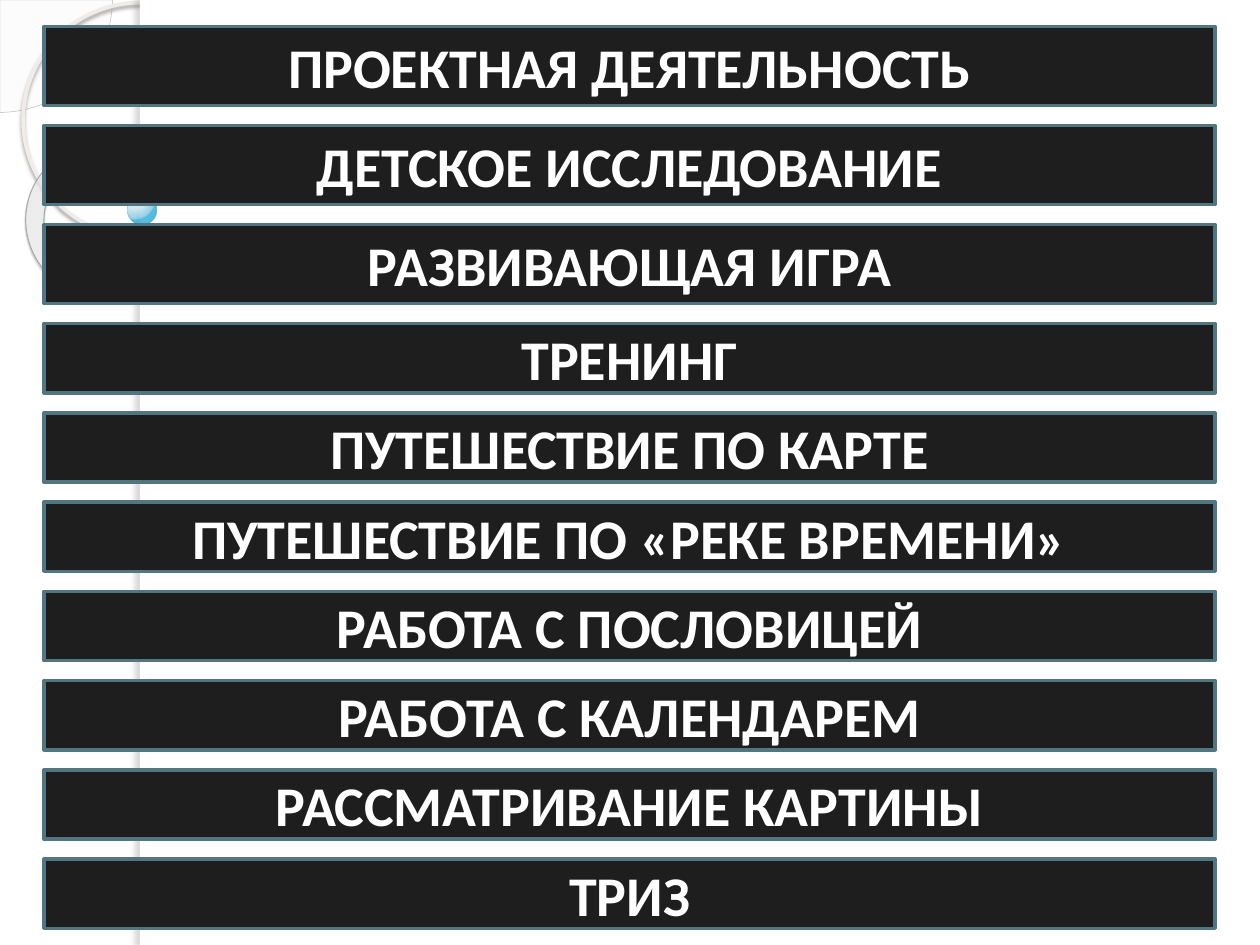
from lxml import etree
from pptx import Presentation
from pptx.dml.color import RGBColor
from pptx.enum import shapes, text
from pptx.oxml import ns
from pptx.util import Pt

WHITE = RGBColor(0xFF, 0xFF, 0xFF)
BAR_FILL = RGBColor(0x1E, 0x1E, 0x1E)
BAR_LINE = RGBColor(0x51, 0x76, 0x82)
PIE_FILL = RGBColor(0xF8, 0xF8, 0xF7)
PIE_LINE = RGBColor(0xB7, 0xB4, 0xB0)
RING_LINE = RGBColor(0xEF, 0xEC, 0xEA)
RING_SHADOW = RGBColor(0x9E, 0x9B, 0x99)
DONUT_STOPS = [(0, RGBColor(0xFA, 0xFA, 0xF9), 70),
               (70, RGBColor(0xFD, 0xFD, 0xFC), 55),
               (100, RGBColor(0xC0, 0xB9, 0xB3), 60)]
DONUT_LINE = RGBColor(0xAC, 0xA8, 0xA5)
DONUT_SHADOW = RGBColor(0x4F, 0x4D, 0x4C)
EDGE_SHADOW = RGBColor(0x69, 0x68, 0x67)
BEAD_STOPS = [(0, RGBColor(0xDF, 0xF5, 0xFE), 95),
              (50, RGBColor(0xCC, 0xE6, 0xF0), 90),
              (95, RGBColor(0x87, 0xCB, 0xE4), 88),
              (100, RGBColor(0x38, 0xB2, 0xD9), 85)]
BEAD_LINE = RGBColor(0x66, 0x9A, 0xAB)
KIND = shapes.MSO_SHAPE


def add_part(parent, tag, **attributes):
    part = etree.SubElement(parent, ns.qn(tag))
    for name, value in attributes.items():
        part.set(name, str(value))
    return part


def draw(kind, box, fill=None, line=None, width=0, alpha=None, stops=None,
         focus=None, shadow=None):
    """Add a preset shape; alpha is a fill opacity, shadow is
    (colour, opacity, blur, distance, angle)."""
    shape = page.shapes.add_shape(kind, *[Pt(length) for length in box])
    shape.shadow.inherit = False
    properties = shape._element.spPr
    if line is None:
        shape.line.fill.background()
    else:
        shape.line.color.rgb = line
        shape.line.width = Pt(width)
    if fill is None:
        shape.fill.background()
    else:
        shape.fill.solid()
        shape.fill.fore_color.rgb = fill
    if alpha:
        colour = properties.find(ns.qn("a:solidFill"))[0]
        add_part(colour, "a:alpha", val=alpha * 1000)
    if stops:
        gradient = etree.Element(ns.qn("a:gradFill"), rotWithShape="1")
        stop_list = add_part(gradient, "a:gsLst")
        for position, rgb, opacity in stops:
            stop = add_part(stop_list, "a:gs", pos=position * 1000)
            colour = add_part(stop, "a:srgbClr", val=rgb)
            add_part(colour, "a:alpha", val=opacity * 1000)
        radial = add_part(gradient, "a:path", path="circle")
        add_part(radial, "a:fillToRect",
                 **{side: value * 1000 for side, value in zip("ltrb", focus)})
        properties.replace(properties.find(ns.qn("a:noFill")), gradient)
    if shadow:
        rgb, opacity, blur, distance, angle = shadow
        outer = add_part(properties.find(ns.qn("a:effectLst")), "a:outerShdw",
                         blurRad=Pt(blur), dist=Pt(distance),
                         dir=angle * 60000, algn="tl", rotWithShape=0)
        colour = add_part(outer, "a:srgbClr", val=rgb)
        add_part(colour, "a:alpha", val=opacity * 1000)
    return shape


deck = Presentation()
deck.slide_width, deck.slide_height = Pt(720), Pt(540)
page = deck.slides.add_slide(deck.slide_layouts[6])

# Decoration along the left edge
pie = draw(KIND.PIE, (-64.2, -64.2, 128.4, 128.4), PIE_FILL, PIE_LINE, 0.25, alpha=33)
pie.adjustments[0], pie.adjustments[1] = 0, 54
draw(KIND.OVAL, (13.2, 1.5, 134, 134), line=RING_LINE, width=2.15,
     shadow=(RING_SHADOW, 85, 2, 2, 90))
donut = draw(KIND.DONUT, (14.4, 82.8, 88.6, 87.1), line=DONUT_LINE, width=0.58,
             stops=DONUT_STOPS, focus=(-408, -50, 508, 150),
             shadow=(DONUT_SHADOW, 35, 1, 1.2, 75))
donut.adjustments[0] = 0.12
donut.rotation = 38.6
draw(KIND.RECTANGLE, (80, 0, 640, 540), WHITE)
draw(KIND.RECTANGLE, (80, 0, 5.8, 540), WHITE, shadow=(EDGE_SHADOW, 25, 3, 3, 180))
bead = draw(KIND.OVAL, (72.7, 111.6, 16.6, 16.6), line=BEAD_LINE, width=0.16,
            stops=BEAD_STOPS, focus=(25, 12, 75, 88))
bead_colour = bead.line._ln.find(ns.qn("a:solidFill"))[0]
add_part(bead_colour, "a:alpha", val=60000)

# Stack of method bars: three tall ones, then lower ones
METHODS = [
    "ПРОЕКТНАЯ ДЕЯТЕЛЬНОСТЬ",
    "ДЕТСКОЕ ИССЛЕДОВАНИЕ",
    "РАЗВИВАЮЩАЯ ИГРА",
    "ТРЕНИНГ",
    "ПУТЕШЕСТВИЕ ПО КАРТЕ",
    "ПУТЕШЕСТВИЕ ПО «РЕКЕ ВРЕМЕНИ»",
    "РАБОТА С ПОСЛОВИЦЕЙ",
    "РАБОТА С КАЛЕНДАРЕМ",
    "РАССМАТРИВАНИЕ КАРТИНЫ",
    "ТРИЗ",
]
TALL_BARS, TALL, LOW, GAP = 3, 45.2, 39.6, 11.4
BAR_FONT = {"name": "Calibri", "size": Pt(32), "bold": True}

top = 15.1
for index, method in enumerate(METHODS):
    height = TALL if index < TALL_BARS else LOW
    bar = draw(KIND.RECTANGLE, (25.2, top, 669.2, height), BAR_FILL, BAR_LINE, 2)
    bar.text_frame.vertical_anchor = text.MSO_ANCHOR.MIDDLE
    para = bar.text_frame.paragraphs[0]
    para.alignment = text.PP_ALIGN.CENTER
    span = para.add_run()
    span.text = method
    for name, value in BAR_FONT.items():
        setattr(span.font, name, value)
    span.font.color.rgb = WHITE
    top += height + GAP

deck.save("out.pptx")
